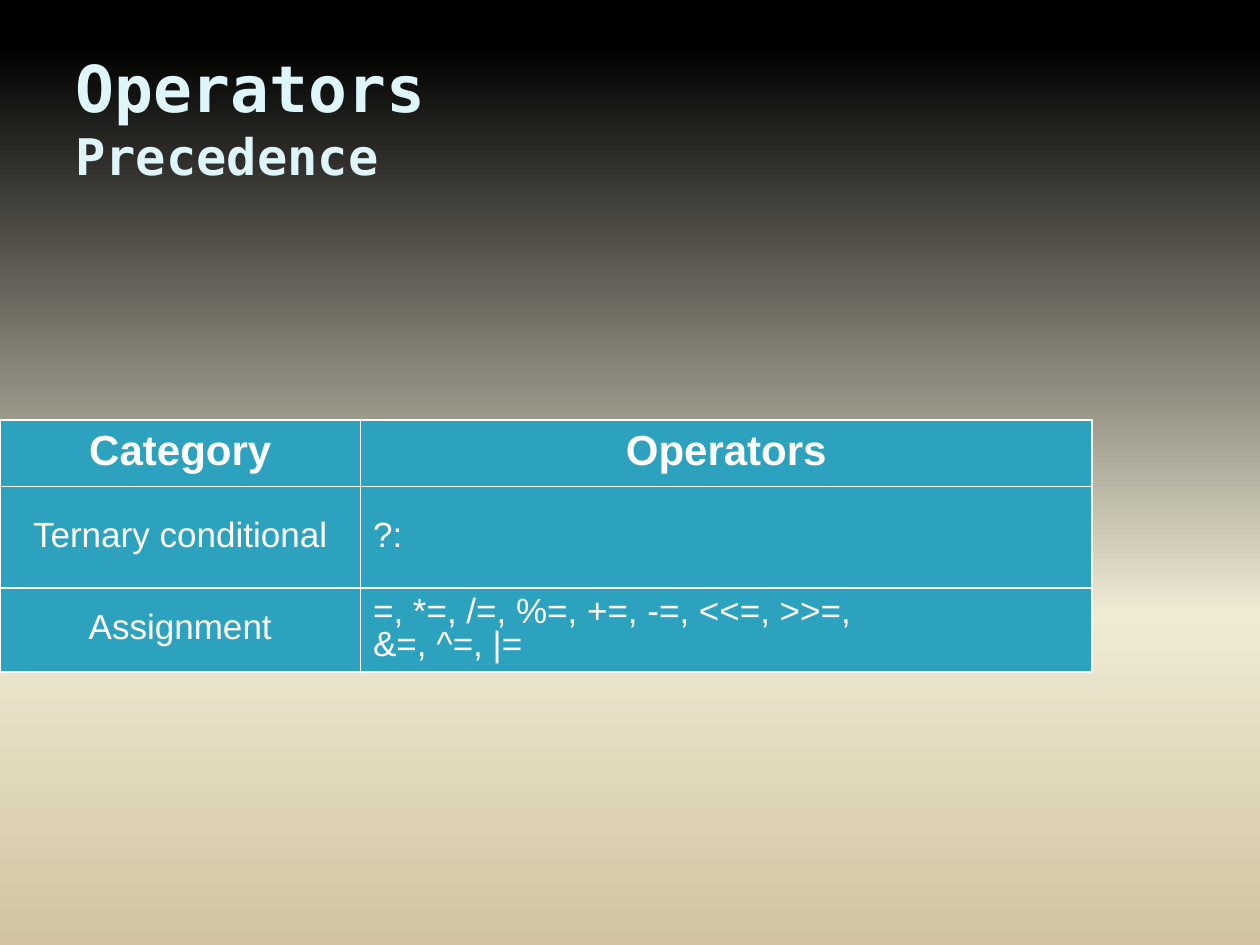
from dataclasses import dataclass

from lxml.etree import SubElement as Sub
from pptx import Presentation
from pptx.dml.color import RGBColor as RGB
from pptx.enum.text import MSO_ANCHOR as Anchor, PP_ALIGN as Align
from pptx.oxml.ns import qn
from pptx.util import Pt


@dataclass(frozen=True)
class Theme:
    back: tuple = ((5, "000000"), (65, "F0EBD5"), (100, "D1C39F"))
    title: str = "DEF5FA"
    cell: str = "2DA2BF"
    text: str = "FFFFFF"
    mono: str = "DejaVu Sans Mono"
    sans: str = "Arial"
    big: float = 36.9
    sub: float = 28.8
    head: float = 24
    body: float = 20


def write(para, text, font, size, color, bold=False):
    for num, line in enumerate(text.split("\n")):
        if num:
            para.add_line_break()
        run = para.add_run()
        run.text = line
        run.font.name, run.font.size, run.font.bold = font, Pt(size), bold
        run.font.color.rgb = RGB.from_string(color)


class Deck:
    """Hold the theme and the current slide, and draw each kind of element."""

    def __init__(self, theme, wide, high):
        self.theme = theme
        self.show = Presentation()
        self.show.slide_width, self.show.slide_height = Pt(wide), Pt(high)
        self.slide = self.show.slides.add_slide(self.show.slide_layouts[6])

    def back(self):
        fill = self.slide.background.fill
        fill.gradient()
        fill.gradient_angle = 270
        stops = next(self.slide.background._cSld.iter(qn("a:gsLst")))
        for stop in list(stops):
            stops.remove(stop)
        for place, color in self.theme.back:
            stop = Sub(stops, qn("a:gs"), pos=str(place * 1000))
            Sub(stop, qn("a:srgbClr"), val=color)

    def title(self, head, sub, left, top, wide, high):
        look = self.theme
        frame = self.slide.shapes.add_textbox(Pt(left), Pt(top), Pt(wide), Pt(high)).text_frame
        frame.word_wrap = True
        frame.vertical_anchor = Anchor.MIDDLE
        para = frame.paragraphs[0]
        style = dict(font=look.mono, color=look.title, bold=True)
        write(para, head, size=look.big, **style)
        para.add_line_break()
        write(para, sub, size=look.sub, **style)

    def edge(self, cell):
        props = cell._tc.get_or_add_tcPr()
        for side in ("lnL", "lnR", "lnT", "lnB"):
            line = Sub(props, qn(f"a:{side}"), w=str(Pt(1)))
            Sub(Sub(line, qn("a:solidFill")), qn("a:srgbClr"), val=self.theme.text)

    def cell(self, cell, text, head, center):
        look = self.theme
        self.edge(cell)
        cell.fill.solid()
        cell.fill.fore_color.rgb = RGB.from_string(look.cell)
        cell.vertical_anchor = Anchor.MIDDLE
        para = cell.text_frame.paragraphs[0]
        para.alignment = Align.CENTER if center else Align.LEFT
        para.line_spacing = 0.85
        write(para, text, font=look.sans, size=look.head if head else look.body,
              color=look.text, bold=head)

    def table(self, data, left, top, cols, rows):
        grid = self.slide.shapes.add_table(len(rows), len(cols), Pt(left), Pt(top),
                                           Pt(sum(cols)), Pt(sum(rows))).table
        for col, wide in zip(grid.columns, cols):
            col.width = Pt(wide)
        for row, high in zip(grid.rows, rows):
            row.height = Pt(high)
        for r, line in enumerate(data):
            for c, text in enumerate(line):
                self.cell(grid.cell(r, c), text, head=r == 0, center=r == 0 or c == 0)


def main():
    deck = Deck(Theme(), 720, 540)
    deck.back()
    deck.title("Operators", "Precedence", 36, 21.6, 648, 90)
    data = (
        ("Category", "Operators"),
        ("Ternary conditional", "?:"),
        ("Assignment", "=, *=, /=, %=, +=, -=, <<=, >>=,\n&=, ^=, |="),
    )
    deck.table(data, 0, 240, cols=(206, 418), rows=(38, 58, 48))
    deck.show.save("out.pptx")


if __name__ == "__main__":
    main()
